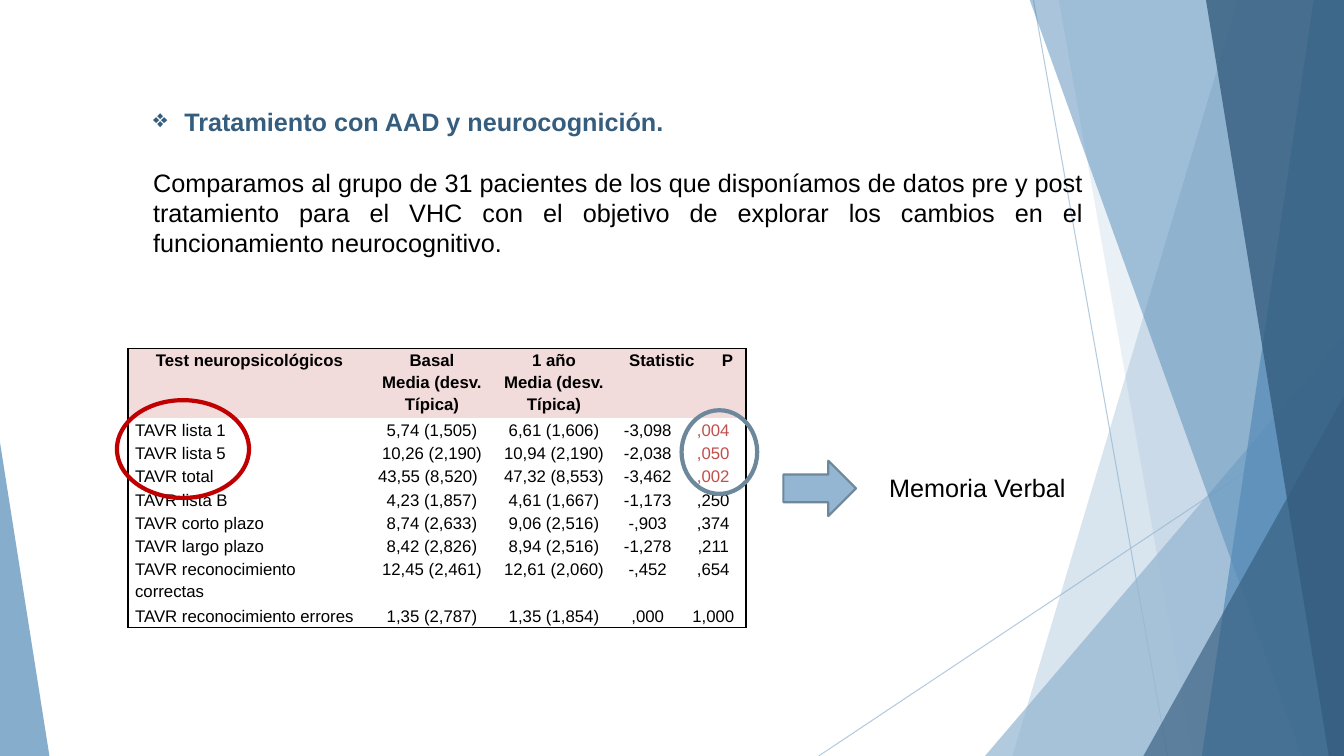
from lxml import etree
from pptx import Presentation
from pptx import util as u
from pptx.dml.color import RGBColor
from pptx.enum import shapes, text
from pptx.oxml.ns import qn

Inches = u.Inches
COLORS = {"light": "94B6D2", "mid": "558BB8", "dark": "355D7E", "outline": "6D879B",
          "red": "C00000", "significant": "C0504D", "header": "F2DBDB", "black": "000000"}
ALIGN = text.PP_ALIGN
SHAPE = shapes.MSO_SHAPE


def paint(target, color, opacity=100):
    target.solid()
    target.fore_color.rgb = RGBColor.from_string(COLORS[color])
    if opacity < 100:
        for node in target._xPr.iter(qn("a:srgbClr")):
            etree.SubElement(node, qn("a:alpha"), val=str(opacity * 1000))


def write(para, words, align, size, color="black", bold=False):
    para.alignment = align
    span = para.add_run()
    span.text = words
    for name, value in {"name": "Arial", "size": u.Pt(size), "bold": bold}.items():
        setattr(span.font, name, value)
    span.font.color.rgb = RGBColor.from_string(COLORS[color])


deck = Presentation()
deck.slide_width, deck.slide_height = Inches(13.33), Inches(7.5)
page = deck.slides.add_slide(deck.slide_layouts[6])

for ends in [(10.25, 0, 11.58, 7.5), (13.33, 4.03, 8.12, 7.5)]:
    ray = page.shapes.add_connector(shapes.MSO_CONNECTOR.STRAIGHT, *[Inches(v) for v in ends])
    ray.line.width = u.Pt(0.75)
    paint(ray.line.fill, "light", 70)
    etree.SubElement(ray.element.spPr, qn("a:effectLst"))

facets = [
    ("band", (12.28, 10.04), "light", 36),
    ("band", (10.5, 11.83), "light", 20),
    ("triangle", (9.77, 3.33, 3.56, 4.17, 1), "light", 72),
    ("band", (10.21, 12.91), "mid", 50),
    ("band", (13.03, 11.92), "mid", 70),
    ("band", (11.96, 13.18), "dark", 80),
    ("triangle", (11.34, 3.93, 1.99, 3.57, 1), "dark", 66),
    ("triangle", (0, 4.39, 0.49, 3.11, 0), "mid", 70),
]
for kind, numbers, color, opacity in facets:
    if kind == "band":
        top_x, bottom_x = numbers
        outline = page.shapes.build_freeform(Inches(top_x), Inches(-0.01))
        corners = [(13.33, -0.01), (13.33, 7.5), (bottom_x, 7.5)]
        outline.add_line_segments([(Inches(x), Inches(y)) for x, y in corners], close=True)
        facet = outline.convert_to_shape()
    else:
        *place, apex = numbers
        facet = page.shapes.add_shape(SHAPE.ISOSCELES_TRIANGLE, *[Inches(v) for v in place])
        facet.adjustments[0] = apex
    facet.shadow.inherit = False
    facet.line.fill.background()
    paint(facet.fill, color, opacity)

intro = page.shapes.add_textbox(Inches(1.42), Inches(1.01), Inches(9.42), Inches(1.92)).text_frame
intro.word_wrap = True
heading = intro.paragraphs[0]
write(heading, "Tratamiento con AAD y neurocognición.", ALIGN.JUSTIFY, 18, "dark", True)
bullet = heading._p.get_or_add_pPr()
for name, value in {"marL": Inches(0.31), "indent": Inches(-0.31)}.items():
    bullet.set(name, str(value))
etree.SubElement(bullet, qn("a:buChar"), char="❖")
body = intro.add_paragraph()
body.space_before = u.Pt(21.6)
write(body, "Comparamos al grupo de 31 pacientes de los que disponíamos de datos pre y post "
      "tratamiento para el VHC con el objetivo de explorar los cambios en el "
      "funcionamiento neurocognitivo.", ALIGN.JUSTIFY, 18)

results = [
    ["Test neuropsicológicos", "Basal\nMedia (desv. Típica)", "1 año\nMedia (desv. Típica)", "Statistic", "P"],
    ["TAVR lista 1", "5,74 (1,505)", "6,61 (1,606)", "-3,098", ",004"],
    ["TAVR lista 5", "10,26 (2,190)", "10,94 (2,190)", "-2,038", ",050"],
    ["TAVR total", "43,55 (8,520)", "47,32 (8,553)", "-3,462", ",002"],
    ["TAVR lista B", "4,23 (1,857)", "4,61 (1,667)", "-1,173", ",250"],
    ["TAVR corto plazo", "8,74 (2,633)", "9,06 (2,516)", "-,903", ",374"],
    ["TAVR largo plazo", "8,42 (2,826)", "8,94 (2,516)", "-1,278", ",211"],
    ["TAVR reconocimiento correctas", "12,45 (2,461)", "12,61 (2,060)", "-,452", ",654"],
    ["TAVR reconocimiento errores", "1,35 (2,787)", "1,35 (1,854)", ",000", "1,000"],
]
widths = [2.41, 1.21, 1.21, 0.65, 0.28, 0.37]
heights = [0.69] + [0.23] * 6 + [0.46, 0.23]
last_row, last_column = len(heights) - 1, len(widths) - 1
frame = page.shapes.add_table(len(heights), len(widths), Inches(1.27), Inches(3.46),
                              Inches(sum(widths)), Inches(sum(heights)))
table = frame.table
table.first_row = table.horz_banding = False
for style in frame.element.iter(qn("a:tableStyleId")):
    style.text = "{2D5ABB26-0587-4C30-8999-92F81FD0307C}"
for column, width in zip(table.columns, widths):
    column.width = Inches(width)
for row, height in zip(table.rows, heights):
    row.height = Inches(height)

for r, values in enumerate(results):
    merged = 3 if r == 0 else 4
    table.cell(r, merged).merge(table.cell(r, merged + 1))
    for c in range(len(widths)):
        cell = table.cell(r, c)
        margins = {"margin_left": 0.07, "margin_right": 0.07, "margin_top": 0, "margin_bottom": 0}
        for name, value in margins.items():
            setattr(cell, name, Inches(value))
        edges = {"a:lnL": c == 0, "a:lnR": c == last_column or (c == merged == 4),
                 "a:lnT": r == 0, "a:lnB": r == last_row}
        for tag, drawn in edges.items():
            if drawn:
                edge = etree.SubElement(cell._tc.get_or_add_tcPr(), qn(tag), w=str(u.Pt(1)))
                ink = etree.SubElement(edge, qn("a:solidFill"))
                etree.SubElement(ink, qn("a:srgbClr"), val=COLORS["black"])
        if r == 0:
            paint(cell.fill, "header")
        else:
            cell.fill.background()
        if cell.is_spanned:
            continue
        value = values[c if c <= merged else c - 1]
        align = ALIGN.LEFT if (r and c == 0) or (r, c) == (3, 1) else ALIGN.CENTER
        color = "significant" if c == 4 and 1 <= r <= 3 else "black"
        for i, words in enumerate(value.split("\n")):
            para = cell.text_frame.add_paragraph() if i else cell.text_frame.paragraphs[0]
            para.line_spacing = 1.15
            write(para, words, align, 12, color, r == 0)

arrow = page.shapes.add_shape(SHAPE.RIGHT_ARROW, Inches(7.77), Inches(4.57), Inches(0.72), Inches(0.55))
arrow.shadow.inherit = False
paint(arrow.fill, "light")
paint(arrow.line.fill, "outline")
arrow.line.width = u.Pt(1.5)

label = page.shapes.add_textbox(Inches(8.72), Inches(4.64), Inches(3.95), Inches(0.4)).text_frame
label.word_wrap = True
write(label.paragraphs[0], "Memoria Verbal", ALIGN.LEFT, 18)

for place, color in [((6.76, 4.07, 0.75, 0.83), "outline"), ((1.16, 3.97, 1.31, 0.97), "red")]:
    ring = page.shapes.add_shape(SHAPE.FLOWCHART_CONNECTOR, *[Inches(v) for v in place])
    ring.shadow.inherit = False
    ring.fill.background()
    paint(ring.line.fill, color)
    ring.line.width = u.Pt(3)

deck.save("out.pptx")
